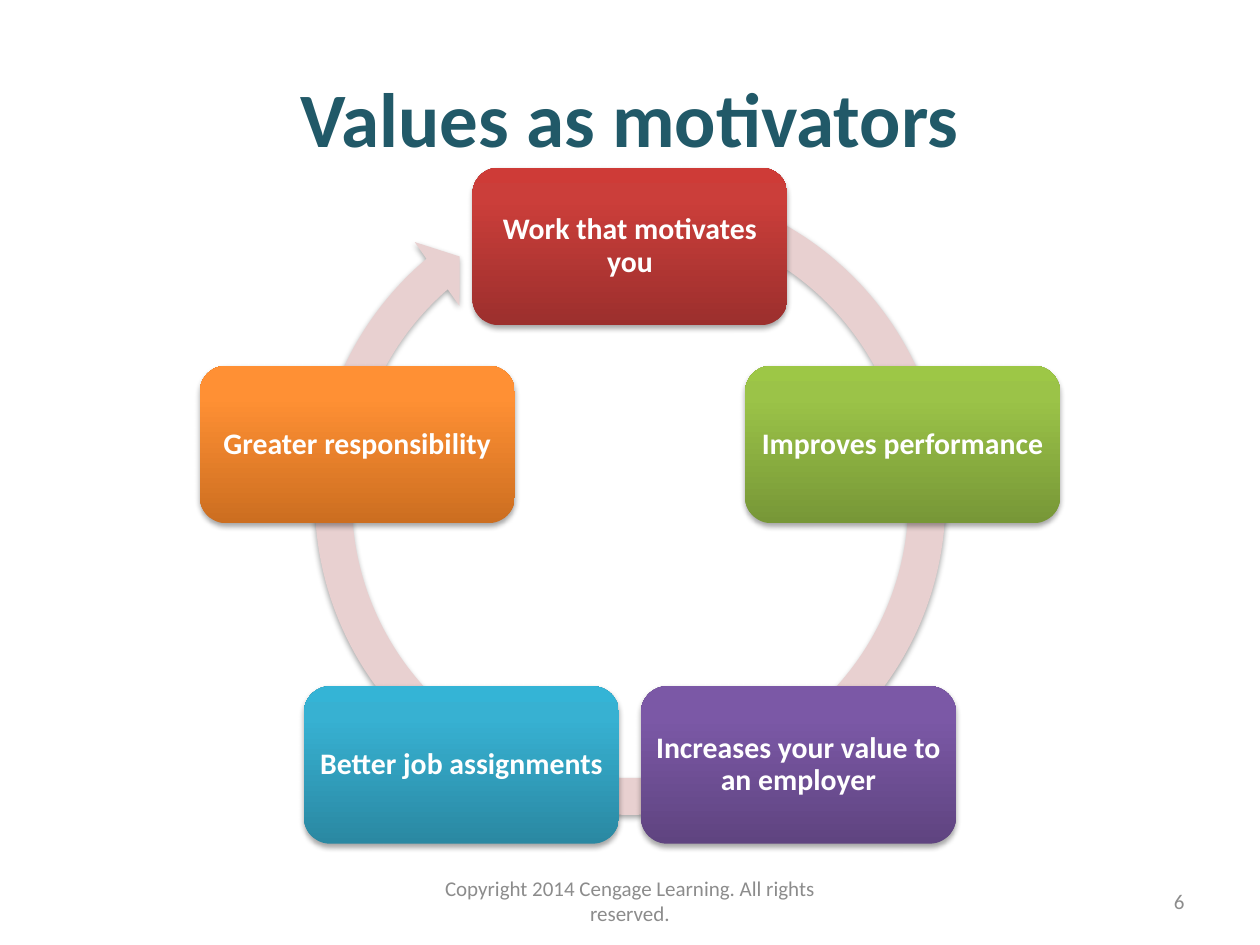
from copy import deepcopy
from math import cos, pi, sin

from lxml.etree import SubElement
from pptx import Presentation
from pptx.dml.color import RGBColor as Color
from pptx.enum.shapes import MSO_SHAPE as Shape
from pptx.enum.text import MSO_ANCHOR as Anchor, PP_ALIGN as Align
from pptx.oxml.ns import qn
from pptx.util import Pt

COLORS = {
    "title": "215968", "ring": "E8D0D0", "label": "FFFFFF",
    "footer": "8C8C8C", "shadow": "000000",
}
TITLE_FONT = {"size": Pt(44), "bold": True}
LABEL_FONT = {"size": Pt(17), "bold": True}
FOOTER_FONT = {"size": Pt(12), "bold": False}

TEXTS = [
    ("Values as motivators", (36, 21.6, 648, 90), "title", TITLE_FONT, Align.CENTER),
    ("6", (516, 500.4, 168, 28.8), "footer", FOOTER_FONT, Align.RIGHT),
    ("Copyright 2014 Cengage Learning. All rights reserved.",
     (246, 500.4, 228, 28.8), "footer", FOOTER_FONT, Align.CENTER),
]
STEPS = [
    ("Work that motivates you", ("9C2F2D", "CB3E3A", "CE3B37")),
    ("Improves performance", ("779737", "9BC348", "9DC746")),
    ("Increases your value to an employer", ("5F4480", "7B58A6", "7C57A8")),
    ("Better job assignments", ("2A88A2", "37B1D2", "34B4D6")),
    ("Greater responsibility", ("CC6E20", "FF9034", "FF9136")),
]
STOP_POSITIONS = (0, 0.8, 1)
CENTER_X, CENTER_Y, RADIUS = 360, 304.6, 163.8
STEP_WIDTH, STEP_HEIGHT = 180, 90
RING_AREA = (168.2, 93.6, 383.8, 383.8)
RING_ADJUSTMENTS = (0.055, 3.307, 137.668, 173.915, 0.058)


def write(box, text, color, font, align, inset=None):
    frame = box.text_frame
    frame.word_wrap = True
    frame.vertical_anchor = Anchor.MIDDLE
    if inset is not None:
        for side in ("left", "right", "top", "bottom"):
            setattr(frame, f"margin_{side}", Pt(inset))
    para = frame.paragraphs[0]
    para.alignment = align
    span = para.add_run()
    span.text = text
    for name, value in {"name": "Calibri", **font}.items():
        setattr(span.font, name, value)
    span.font.color.rgb = Color.from_string(COLORS[color])
    return para


def add_shadowed(page, kind, area):
    shape = page.shapes.add_shape(kind, *map(Pt, area))
    shape.line.fill.background()
    shape.shadow.inherit = False
    effects = shape._element.spPr.find(qn("a:effectLst"))
    shadow = SubElement(effects, qn("a:outerShdw"), blurRad=str(Pt(3.1)),
                        dist=str(Pt(1.8)), dir="5400000", rotWithShape="0")
    tint = SubElement(shadow, qn("a:srgbClr"), val=COLORS["shadow"])
    SubElement(tint, qn("a:alpha"), val="35000")
    return shape


def fill_gradient(shape, colors):
    shape.fill.gradient()
    shape.fill.gradient_angle = 90
    stops = shape._element.spPr.find(".//" + qn("a:gsLst"))
    stops.append(deepcopy(stops[-1]))
    for stop, position, color in zip(shape.fill.gradient_stops, STOP_POSITIONS, colors):
        stop.position = position
        stop.color.rgb = Color.from_string(color)


def main():
    deck = Presentation()
    deck.slide_width, deck.slide_height = Pt(720), Pt(540)
    page = deck.slides.add_slide(deck.slide_layouts[6])

    for text, area, color, font, align in TEXTS:
        write(page.shapes.add_textbox(*map(Pt, area)), text, color, font, align)

    ring = add_shadowed(page, Shape.CIRCULAR_ARROW, RING_AREA)
    ring.fill.solid()
    ring.fill.fore_color.rgb = Color.from_string(COLORS["ring"])
    for index, value in enumerate(RING_ADJUSTMENTS):
        ring.adjustments[index] = value

    for index, (text, colors) in enumerate(STEPS):
        angle = 2 * pi * index / len(STEPS)
        left = CENTER_X + RADIUS * sin(angle) - STEP_WIDTH / 2
        top = CENTER_Y - RADIUS * cos(angle) - STEP_HEIGHT / 2
        box = add_shadowed(page, Shape.ROUNDED_RECTANGLE,
                           (left, top, STEP_WIDTH, STEP_HEIGHT))
        fill_gradient(box, colors)
        para = write(box, text, "label", LABEL_FONT, Align.CENTER, inset=1)
        para.line_spacing = 0.9

    deck.save("out.pptx")


if __name__ == "__main__":
    main()
